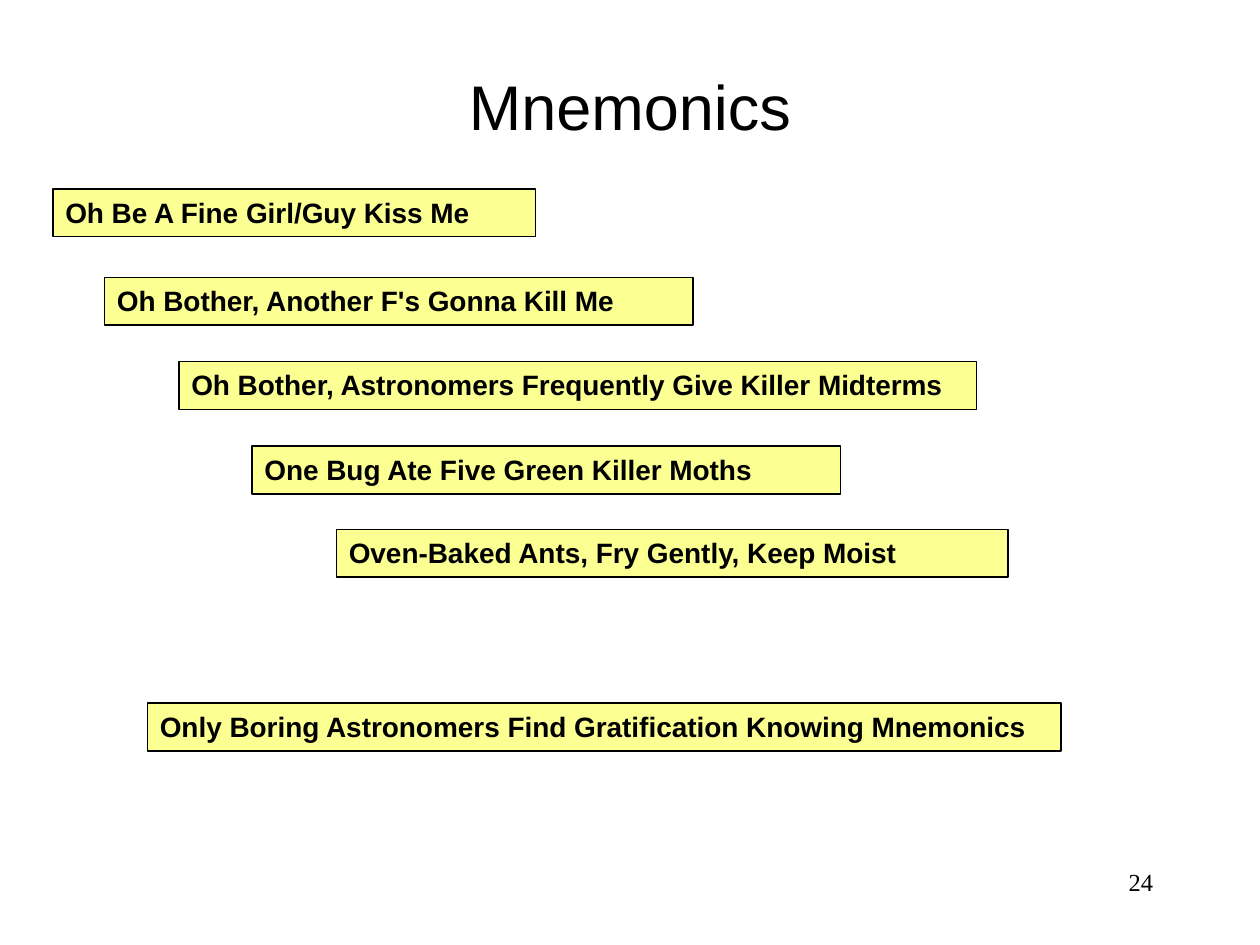
import pptx
import pptx.util
import pptx.dml.color
import pptx.enum.shapes
import pptx.enum.text
from pptx.util import Inches

COLOURS = {"text": "000000", "line": "000000", "card": "FCFF91", "page": "FFFFFF"}
ALIGN = pptx.enum.text.PP_ALIGN
ANCHOR = pptx.enum.text.MSO_ANCHOR
CARD_HEIGHT = 0.38

MNEMONICS = [
    ("Oh Be A Fine Girl/Guy Kiss Me", 0.42, 1.5, 3.83),
    ("Oh Bother, Another F's Gonna Kill Me", 0.83, 2.2, 4.67),
    ("Oh Bother, Astronomers Frequently Give Killer Midterms", 1.42, 2.87, 6.33),
    ("One Bug Ate Five Green Killer Moths", 2, 3.54, 4.67),
    ("Oven-Baked Ants, Fry Gently, Keep Moist", 2.67, 4.2, 5.33),
    ("Only Boring Astronomers Find Gratification Knowing Mnemonics", 1.17, 5.58, 7.25),
]


def colour(name):
    return pptx.dml.color.RGBColor.from_string(COLOURS[name])


def write_text(shape, text, size, font="Arial", bold=False, align=ALIGN.LEFT, anchor=ANCHOR.TOP):
    frame = shape.text_frame
    frame.word_wrap = True
    frame.vertical_anchor = anchor
    para = frame.paragraphs[0]
    para.alignment = align
    span = para.add_run()
    span.text = text
    span.font.size = pptx.util.Pt(size)
    span.font.name = font
    span.font.bold = bold
    span.font.color.rgb = colour("text")


def add_title(page, box):
    title = page.shapes.add_textbox(*map(Inches, box))
    write_text(title, "Mnemonics", size=36, align=ALIGN.CENTER, anchor=ANCHOR.MIDDLE)


def add_card(page, box, text):
    card = page.shapes.add_shape(pptx.enum.shapes.MSO_SHAPE.RECTANGLE, *map(Inches, box))
    card.shadow.inherit = False
    card.fill.solid()
    card.fill.fore_color.rgb = colour("card")
    card.line.color.rgb = colour("line")
    card.line.width = pptx.util.Pt(0.75)
    write_text(card, text, size=16, bold=True)


def add_page_number(page, box):
    number = page.shapes.add_textbox(*map(Inches, box))
    write_text(number, "24", size=14, font="Times New Roman", align=ALIGN.RIGHT)


def main():
    deck = pptx.Presentation()
    deck.slide_width, deck.slide_height = Inches(10), Inches(7.5)
    page = deck.slides.add_slide(deck.slide_layouts[6])
    page.background.fill.solid()
    page.background.fill.fore_color.rgb = colour("page")
    add_title(page, (0.75, 0.42, 8.5, 0.83))
    for text, left, top, width in MNEMONICS:
        add_card(page, (left, top, width, CARD_HEIGHT), text)
    add_page_number(page, (7.17, 6.83, 2.08, 0.5))
    deck.save("out.pptx")


if __name__ == "__main__":
    main()
